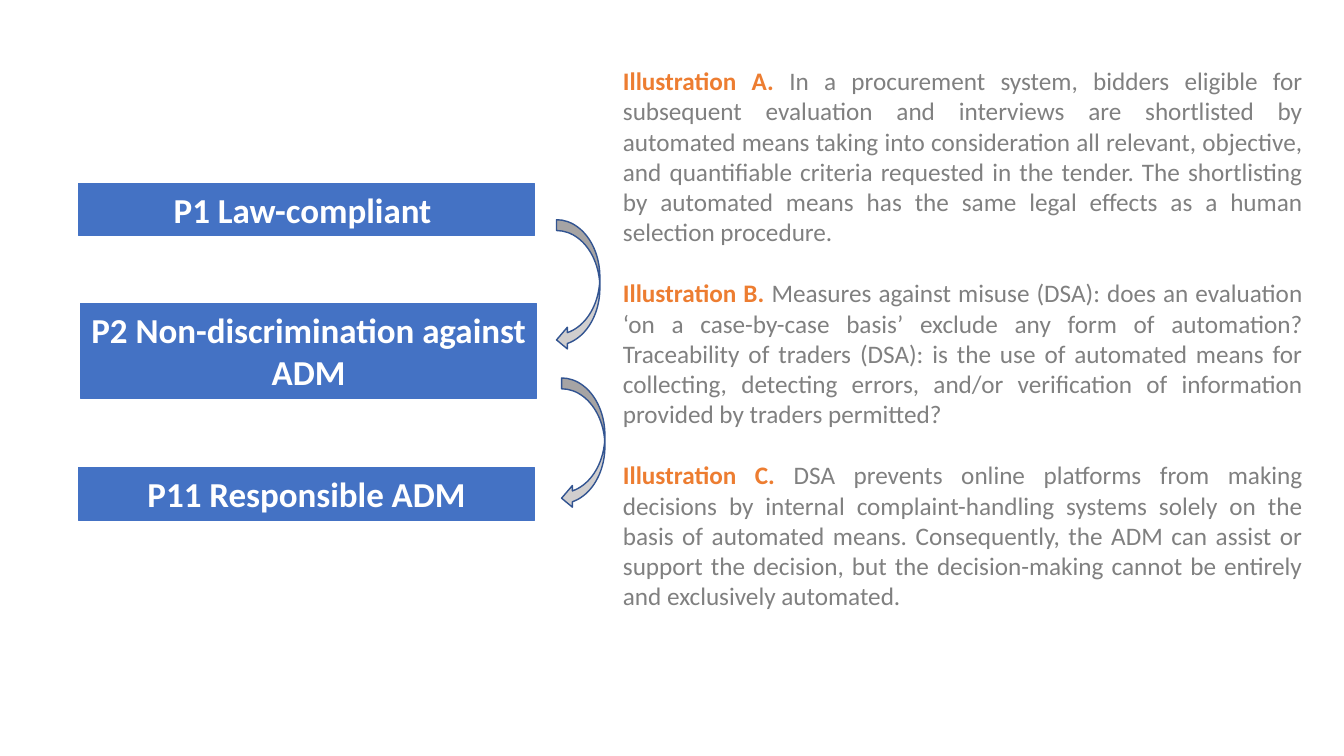
"""Build a slide linking three principles to three illustrations."""
import pptx
import pptx.util
import pptx.dml.color
import pptx.enum.shapes
import pptx.enum.text

SIZE = (1333, 750)
STEPS = [
    ("P1 Law-compliant ", (78, 182, 452, 52)),
    ("P2 Non-discrimination against ADM", (80, 301, 452, 94)),
    ("P11 Responsible ADM", (78, 464, 452, 52)),
]
ARROWS = [(552, 218, 43, 130), (557, 375, 43, 130)]
NOTES_BOX = (608, 60, 694, 555)
NOTES = [
    ("Illustration A. ",
     "In a procurement system, bidders eligible for subsequent evaluation and "
     "interviews are shortlisted by automated means taking into consideration "
     "all relevant, objective, and quantifiable criteria requested in the "
     "tender. The shortlisting by automated means has the same legal effects "
     "as a human selection procedure."),
    ("Illustration B. ",
     "Measures against misuse (DSA): does an evaluation ‘on a case-by-case "
     "basis’ exclude any form of automation? Traceability of traders (DSA): "
     "is the use of automated means for collecting, detecting errors, and/or "
     "verification of information provided by traders permitted?"),
    ("Illustration C. ",
     "DSA prevents online platforms from making decisions by internal "
     "complaint-handling systems solely on the basis of automated means. "
     "Consequently, the ADM can assist or support the decision, but the "
     "decision-making cannot be entirely and exclusively automated."),
]
BLUE, NAVY, GREY = "4472C4", "325491", "D0CECE"
WHITE, ORANGE, TEXT = "FFFFFF", "ED7D31", "808080"

Pt = pptx.util.Pt
KIND = pptx.enum.shapes.MSO_SHAPE
ALIGN = pptx.enum.text.PP_ALIGN


def px(*vals):
    return [pptx.util.Emu(val * 9144) for val in vals]


def color(code):
    return pptx.dml.color.RGBColor.from_string(code)


def style(run, size, code, bold):
    font = run.font
    font.name, font.size, font.bold = "Calibri", Pt(size), bold
    font.color.rgb = color(code)


def draw(slide, kind, box, fill, line, width):
    shape = slide.shapes.add_shape(kind, *px(*box))
    shape.shadow.inherit = False
    shape.fill.solid()
    shape.fill.fore_color.rgb = color(fill)
    shape.line.color.rgb = color(line)
    shape.line.width = Pt(width)
    return shape


def add_step(slide, label, box):
    frame = draw(slide, KIND.RECTANGLE, box, BLUE, BLUE, 0.75).text_frame
    frame.word_wrap = True
    frame.text = label
    para = frame.paragraphs[0]
    para.alignment = ALIGN.CENTER
    style(para.runs[0], 25, WHITE, True)


def add_notes(slide):
    frame = slide.shapes.add_textbox(*px(*NOTES_BOX)).text_frame
    frame.word_wrap = True
    for idx, (head, body) in enumerate(NOTES):
        para = frame.add_paragraph() if idx else frame.paragraphs[0]
        para.alignment = ALIGN.JUSTIFY
        para.space_before = Pt(22 if idx else 0)
        for words, code, bold in ((head, ORANGE, True), (body, TEXT, False)):
            run = para.add_run()
            run.text = words
            style(run, 18, code, bold)


def main():
    deck = pptx.Presentation()
    deck.slide_width, deck.slide_height = px(*SIZE)
    slide = deck.slides.add_slide(deck.slide_layouts[6])
    for label, box in STEPS:
        add_step(slide, label, box)
    for box in ARROWS:
        draw(slide, KIND.CURVED_LEFT_ARROW, box, GREY, NAVY, 1)
    add_notes(slide)
    deck.save("out.pptx")


if __name__ == "__main__":
    main()
